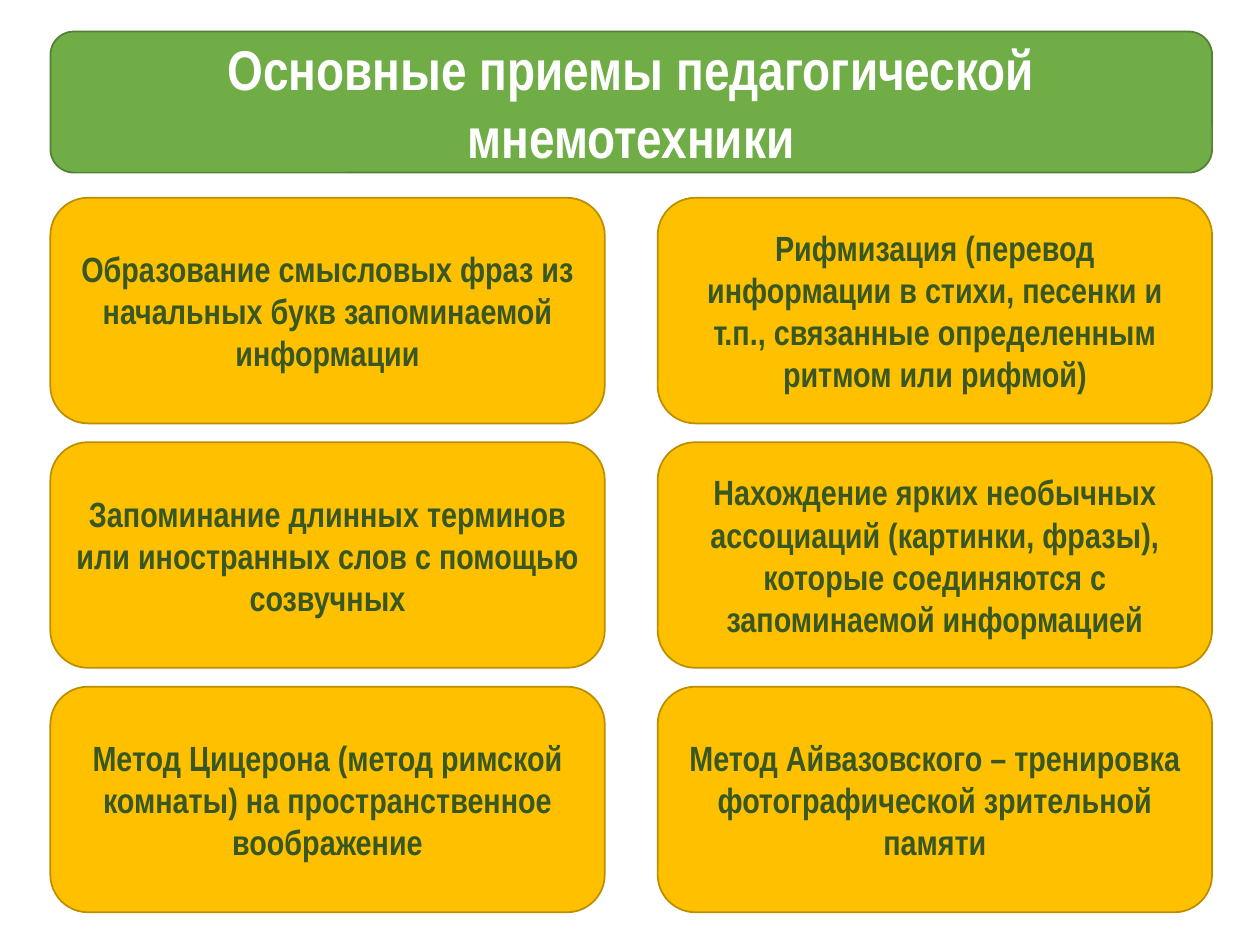
"""Build a slide listing the main techniques of pedagogical mnemonics."""
import pptx
import pptx.util
from pptx.dml.color import RGBColor
from pptx.enum.shapes import MSO_SHAPE
from pptx.enum.text import MSO_ANCHOR, MSO_AUTO_SIZE, PP_ALIGN
from pptx.util import Inches

WHITE = RGBColor(0xFF, 0xFF, 0xFF)
GREEN = RGBColor(0x70, 0xAD, 0x47)
GREEN_EDGE = RGBColor(0x53, 0x80, 0x35)
AMBER = RGBColor(0xFF, 0xC0, 0x00)
AMBER_EDGE = RGBColor(0xBD, 0x8E, 0x00)
DARK_GREEN = RGBColor(0x38, 0x57, 0x23)

HEADING = "Основные приемы педагогической мнемотехники"
TECHNIQUES = [
    "Образование смысловых фраз из начальных букв запоминаемой информации",
    "Рифмизация (перевод информации в стихи, песенки и т.п., связанные определенным ритмом или рифмой)",
    "Запоминание длинных терминов или иностранных слов с помощью созвучных",
    "Нахождение ярких необычных ассоциаций (картинки, фразы), которые соединяются с запоминаемой информацией",
    "Метод Цицерона (метод римской комнаты) на пространственное воображение",
    "Метод Айвазовского – тренировка фотографической зрительной памяти",
]

LEFT, TOP = 0.4, 1.57
CARD_WIDTH, CARD_HEIGHT = 4.4, 1.79
COLUMN_STEP, ROW_STEP = 4.82, 1.94


class SlideBuilder:
    """Hold the text style and the slide being filled."""

    def __init__(self, slide):
        self.slide = slide
        self.font = {"name": "Arial Narrow", "bold": True}
        self.frame = {
            "word_wrap": True,
            "auto_size": MSO_AUTO_SIZE.NONE,
            "vertical_anchor": MSO_ANCHOR.MIDDLE,
        }

    def label(self, holder, text, size, color):
        frame = holder.text_frame
        frame.text = text
        paragraph = frame.paragraphs[0]
        paragraph.alignment = PP_ALIGN.CENTER
        font = paragraph.runs[0].font
        font_format = {**self.font, "size": pptx.util.Pt(size)}
        for target, values in ((frame, self.frame), (font, font_format)):
            for attribute, value in values.items():
                setattr(target, attribute, value)
        font.color.rgb = color

    def panel(self, left, top, width, height, fill, edge):
        panel = self.slide.shapes.add_shape(
            MSO_SHAPE.ROUNDED_RECTANGLE,
            Inches(left), Inches(top), Inches(width), Inches(height))
        panel.shadow.inherit = False
        panel.fill.solid()
        panel.fill.fore_color.rgb = fill
        panel.line.color.rgb = edge
        panel.line.width = pptx.util.Pt(1)
        return panel

    def title(self, text, left, top, width, height):
        self.panel(left, top, width, height, GREEN, GREEN_EDGE)
        title = self.slide.shapes.title
        inset = 0.1
        position = {"left": left + inset, "top": top,
                    "width": width - 2 * inset, "height": height}
        for attribute, value in position.items():
            setattr(title, attribute, Inches(value))
        self.label(title, text, 32, WHITE)
        self.slide.shapes.element.append(title.element)

    def card(self, text, left, top):
        card = self.panel(left, top, CARD_WIDTH, CARD_HEIGHT, AMBER, AMBER_EDGE)
        self.label(card, text, 20, DARK_GREEN)


def main():
    deck = pptx.Presentation()
    deck.slide_width, deck.slide_height = Inches(10), Inches(7.5)
    builder = SlideBuilder(deck.slides.add_slide(deck.slide_layouts[5]))
    builder.title(HEADING, LEFT, 0.25, COLUMN_STEP + CARD_WIDTH, 1.12)
    for index, technique in enumerate(TECHNIQUES):
        row, column = divmod(index, 2)
        builder.card(technique, LEFT + column * COLUMN_STEP, TOP + row * ROW_STEP)
    deck.save("out.pptx")


if __name__ == "__main__":
    main()
